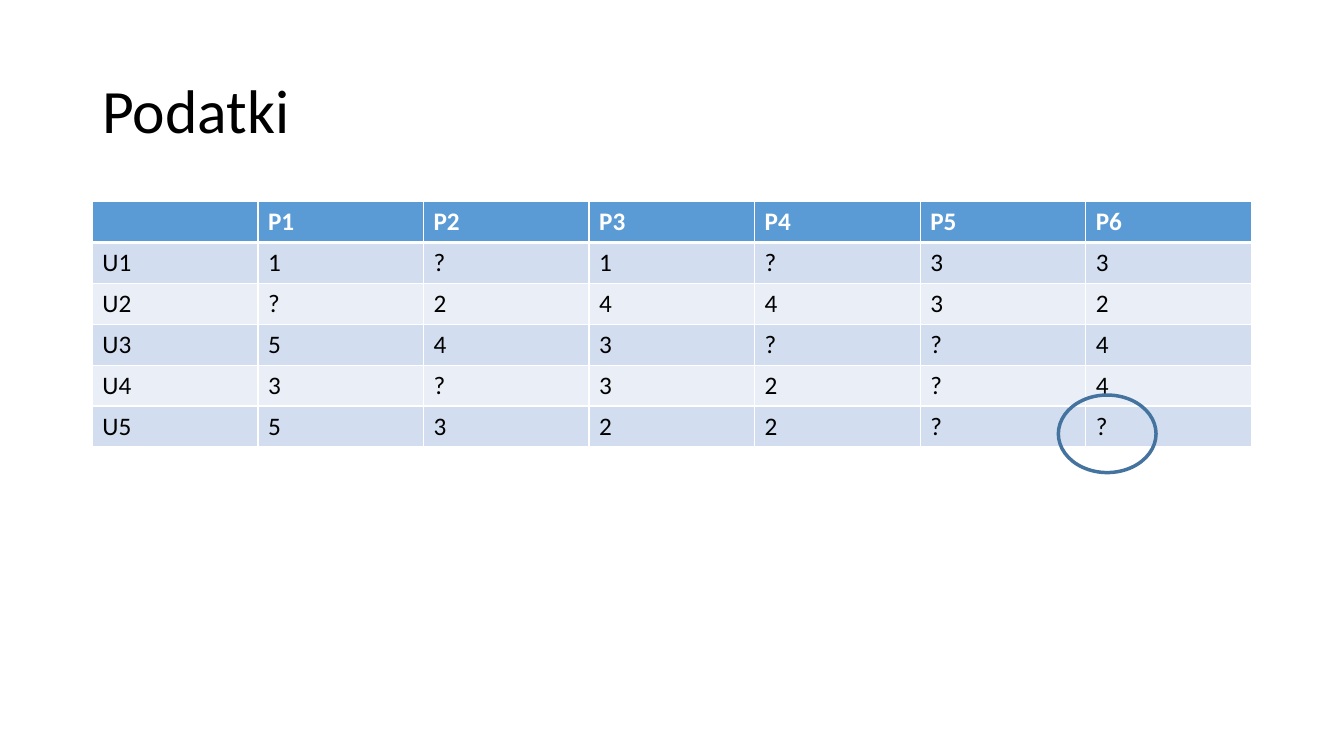
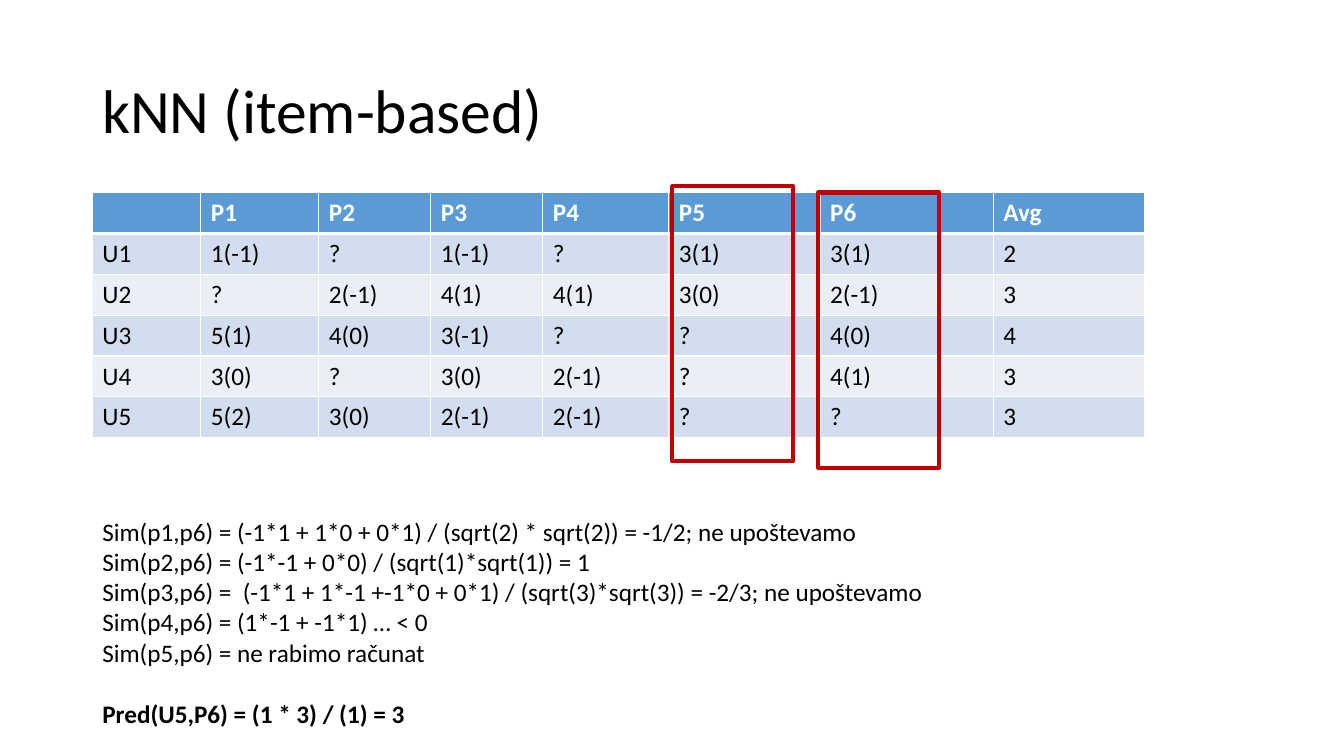
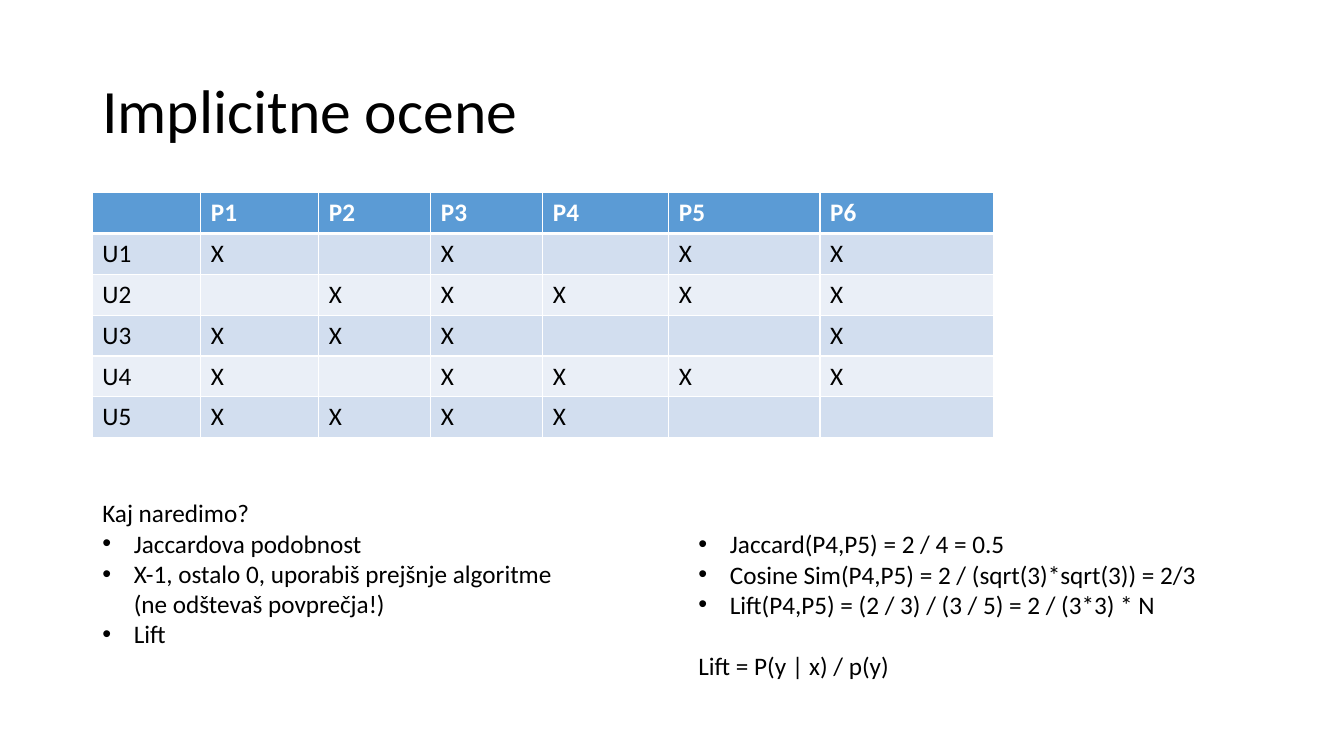
from lxml import etree
from pptx import Presentation
from pptx import util as u
from pptx.dml import color
from pptx.enum import shapes, text
from pptx.oxml import ns

FONT = "Calibri"
BLACK, WHITE, RED, STEEL = "000000", "FFFFFF", "C00000", "43739E"
HEADER_FILL = "5B9BD5"
BAND_FILLS = ("D2DEEF", "EAEFF7")
LEFT, CONTENT_WIDTH = 66, 828
BODY_SIZE, BODY_LINE = 18, 22
ROW_HEIGHT = 29.2
HANGING = 22.5
NARROW_TOP = 137.5
NARROW_COLUMNS = (77.5, 84.3, 80, 80, 90, 108, 123.8)
EVEN_COLUMNS = (CONTENT_WIDTH / 7,) * 7

RATINGS = (
    "|P1|P2|P3|P4|P5|P6",
    "U1|1|?|1|?|3|3",
    "U2|?|2|4|4|3|2",
    "U3|5|4|3|?|?|4",
    "U4|3|?|3|2|?|4",
    "U5|5|3|2|2|?|?",
)
DEVIATIONS = (
    "|P1|P2|P3|P4|P5|P6|Avg",
    "U1|1(-1)|?|1(-1)|?|3(1)|3(1)|2",
    "U2|?|2(-1)|4(1)|4(1)|3(0)|2(-1)|3",
    "U3|5(1)|4(0)|3(-1)|?|?|4(0)|4",
    "U4|3(0)|?|3(0)|2(-1)|?|4(1)|3",
    "U5|5(2)|3(0)|2(-1)|2(-1)|?|?|3",
)
IMPLICIT = (
    "|P1|P2|P3|P4|P5|P6",
    "U1|X||X||X|X",
    "U2||X|X|X|X|X",
    "U3|X|X|X|||X",
    "U4|X||X|X|X|X",
    "U5|X|X|X|X||",
)


def rgb(value):
    return color.RGBColor.from_string(value)


def points(*lengths):
    return [u.Pt(length) for length in lengths]


def write(para, words, size=BODY_SIZE, ink=BLACK, bold=False, bullet=False,
          before=0, spacing=None):
    """Fill a paragraph; a newline in words becomes a line break."""
    para.text = words
    for span in para.runs:
        span.font.name = FONT
        span.font.size = u.Pt(size)
        span.font.bold = bold
        span.font.color.rgb = rgb(ink)
    if before:
        para.space_before = u.Pt(before)
    if spacing:
        para.line_spacing = spacing
    if bullet:
        properties = para._p.get_or_add_pPr()
        properties.set("marL", str(u.Pt(HANGING)))
        properties.set("indent", str(-u.Pt(HANGING)))
        etree.SubElement(properties, ns.qn("a:buFont"), typeface="Arial")
        etree.SubElement(properties, ns.qn("a:buChar"), char="•")


def add_title(page, words):
    box = page.shapes.add_textbox(*points(LEFT, 28.8, CONTENT_WIDTH, 104.4))
    box.text_frame.word_wrap = True
    box.text_frame.vertical_anchor = text.MSO_ANCHOR.MIDDLE
    write(box.text_frame.paragraphs[0], words, size=44, spacing=0.9)


def add_lines(page, bounds, lines):
    """Add a box of paragraphs, each given as (words, format)."""
    frame = page.shapes.add_textbox(*points(*bounds)).text_frame
    frame.word_wrap = False
    frame.auto_size = text.MSO_AUTO_SIZE.SHAPE_TO_FIT_TEXT
    for number, (words, style) in enumerate(lines):
        para = frame.add_paragraph() if number else frame.paragraphs[0]
        write(para, words, **style)


def add_borders(cell, bottom):
    properties = cell._tc.get_or_add_tcPr()
    for side, width in (("L", 1), ("R", 1), ("T", 1), ("B", bottom)):
        line = etree.SubElement(properties, ns.qn("a:ln" + side), w=str(u.Pt(width)))
        fill = etree.SubElement(line, ns.qn("a:solidFill"))
        etree.SubElement(fill, ns.qn("a:srgbClr"), val=WHITE)


def add_grid(page, top, widths, rows):
    """Add a banded table; each row is a string with cells split by bars."""
    bounds = points(LEFT, top, sum(widths), ROW_HEIGHT * len(rows))
    table = page.shapes.add_table(len(rows), len(widths), *bounds).table
    for column, width in zip(table.columns, widths):
        column.width = u.Pt(width)
    for number, (row, words) in enumerate(zip(table.rows, rows)):
        header = number == 0
        row.height = u.Pt(ROW_HEIGHT)
        for cell, value in zip(row.cells, words.split("|")):
            add_borders(cell, bottom=3 if header else 1)
            cell.fill.solid()
            cell.fill.fore_color.rgb = rgb(
                HEADER_FILL if header else BAND_FILLS[(number - 1) % 2])
            write(cell.text_frame.paragraphs[0], value,
                  ink=WHITE if header else BLACK, bold=header)


def add_outline(page, kind, bounds, ink, width):
    shape = page.shapes.add_shape(kind, *points(*bounds))
    shape.shadow.inherit = False
    shape.fill.background()
    shape.line.color.rgb = rgb(ink)
    shape.line.width = u.Pt(width)


def add_page(deck, title):
    page = deck.slides.add_slide(deck.slide_layouts[6])
    add_title(page, title)
    return page


def build_data(deck):
    page = add_page(deck, "Podatki")
    add_grid(page, 144, EVEN_COLUMNS, RATINGS)
    add_outline(page, shapes.MSO_SHAPE.OVAL, (756, 282.2, 69.8, 55.4), STEEL, 2.5)


def build_item_based(deck):
    page = add_page(deck, "kNN (item-based)")
    add_grid(page, NARROW_TOP, NARROW_COLUMNS + (108,), DEVIATIONS)
    add_lines(page, (LEFT, 365, 608.4, 159.8), (
        ("Sim(p1,p6) = (-1*1 + 1*0 + 0*1) / (sqrt(2) * sqrt(2)) = -1/2; ne upoštevamo", {}),
        ("Sim(p2,p6) = (-1*-1 + 0*0) / (sqrt(1)*sqrt(1)) = 1", {}),
        ("Sim(p3,p6) =  (-1*1 + 1*-1 +-1*0 + 0*1) / (sqrt(3)*sqrt(3)) = -2/3; ne upoštevamo", {}),
        ("Sim(p4,p6) = (1*-1 + -1*1) … < 0", {}),
        ("Sim(p5,p6) = ne rabimo računat", {}),
        ("Pred(U5,P6) = (1 * 3) / (1) = 3", {"bold": True, "before": BODY_LINE}),
    ))
    for left, top in ((480.2, 133), (584.6, NARROW_TOP)):
        add_outline(page, shapes.MSO_SHAPE.RECTANGLE, (left, top, 86.4, 196.6), RED, 3)


def build_implicit(deck):
    page = add_page(deck, "Implicitne ocene")
    add_grid(page, NARROW_TOP, NARROW_COLUMNS, IMPLICIT)
    bullet = {"bullet": True}
    add_lines(page, (LEFT, 352, 339.8, 116.6), (
        ("Kaj naredimo?", {}),
        ("Jaccardova podobnost", bullet),
        ("X-1, ostalo 0, uporabiš prejšnje algoritme\n(ne odštevaš povprečja!)", bullet),
        ("Lift", bullet),
    ))
    add_lines(page, (491.8, 352 + BODY_LINE, 372.2, 116.2), (
        ("Jaccard(P4,P5) = 2 / 4 = 0.5", bullet),
        ("Cosine Sim(P4,P5) = 2 / (sqrt(3)*sqrt(3)) = 2/3", bullet),
        ("Lift(P4,P5) = (2 / 3) / (3 / 5) = 2 / (3*3) * N", bullet),
        ("Lift = P(y | x) / p(y)", {"before": BODY_LINE}),
    ))


def main():
    deck = Presentation()
    deck.slide_width, deck.slide_height = points(960, 540)
    build_data(deck)
    build_item_based(deck)
    build_implicit(deck)
    deck.save("out.pptx")


if __name__ == "__main__":
    main()
